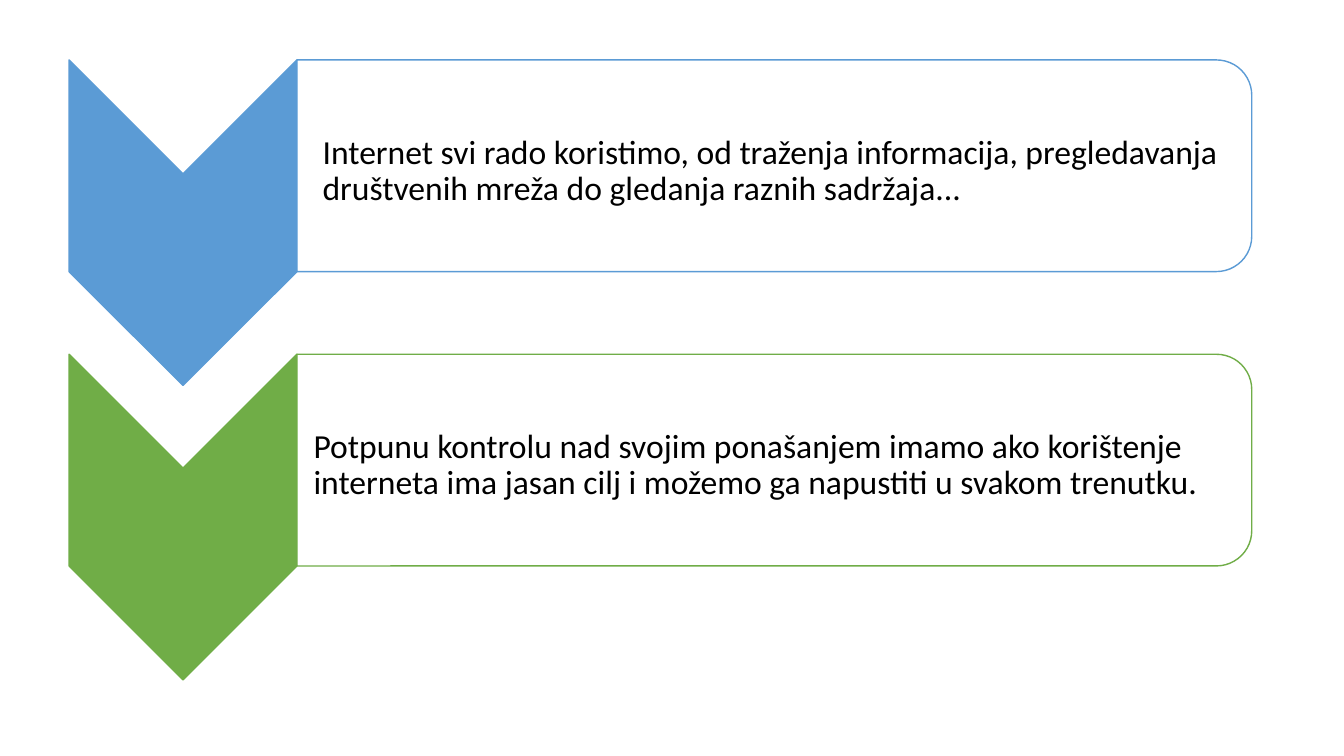
from dataclasses import dataclass

from lxml.etree import SubElement
from pptx import Presentation
from pptx.dml.color import RGBColor
from pptx.enum.shapes import MSO_SHAPE
from pptx.enum.text import MSO_ANCHOR, PP_ALIGN
from pptx.oxml.ns import qn
from pptx.util import Inches, Pt

BLUE = RGBColor(0x5B, 0x9B, 0xD5)
GREEN = RGBColor(0x70, 0xAD, 0x47)
WHITE = RGBColor(0xFF, 0xFF, 0xFF)
BLACK = RGBColor(0x00, 0x00, 0x00)

ROW_STEP = 2.92


@dataclass
class Row:
    text: str
    color: RGBColor
    text_inset: float


ROWS = [
    Row("Internet svi rado koristimo, od traženja informacija, pregledavanja "
        "društvenih mreža do gledanja raznih sadržaja...", BLUE, 0.25),
    Row("Potpunu kontrolu nad svojim ponašanjem imamo ako korištenje "
        "interneta ima jasan cilj i možemo ga napustiti u svakom trenutku.", GREEN, 0.16),
]


def add_turned_shape(slide, kind: MSO_SHAPE, left: float, top: float, width: float,
                     height: float, fill: RGBColor, line: RGBColor):
    """Add a shape turned a quarter clockwise."""
    s = slide.shapes.add_shape(kind, Inches(left), Inches(top), Inches(width), Inches(height))
    s.rotation = 90
    s.shadow.inherit = False
    s.fill.solid()
    s.fill.fore_color.rgb = fill
    s.line.color.rgb = line
    s.line.width = Pt(1)
    return s


def add_row_text(slide, row: Row, top: float) -> None:
    s = slide.shapes.add_textbox(Inches(2.95), Inches(top), Inches(9.37), Inches(1.9))
    tf = s.text_frame
    tf.word_wrap = True
    tf.vertical_anchor = MSO_ANCHOR.MIDDLE
    tf.margin_left = Inches(row.text_inset)
    tf.margin_top = Inches(0.12)
    tf.margin_right = tf.margin_bottom = Inches(0.02)
    p = tf.paragraphs[0]
    p.alignment = PP_ALIGN.LEFT
    p.line_spacing = 0.9
    r = p.add_run()
    r.text = row.text
    r.font.name = "Calibri"
    r.font.size = Pt(24)
    r.font.color.rgb = BLACK


def add_row(slide, row: Row, offset: float) -> None:
    # Chevron pointing down
    add_turned_shape(slide, MSO_SHAPE.CHEVRON, 0.2, 1.08 + offset, 3.23, 2.26,
                     row.color, row.color)
    # Panel with rounded right corners and a slightly transparent fill
    panel = add_turned_shape(slide, MSO_SHAPE.ROUND_2_SAME_RECTANGLE, 6.63, -3.09 + offset,
                             2.1, 9.47, WHITE, row.color)
    color = panel.fill._xPr.find(qn("a:solidFill")).find(qn("a:srgbClr"))
    SubElement(color, qn("a:alpha")).set("val", "90000")
    # Panel text
    add_row_text(slide, row, 0.7 + offset)


def main() -> None:
    prs = Presentation()
    prs.slide_width = Inches(13.33)
    prs.slide_height = Inches(7.5)
    slide = prs.slides.add_slide(prs.slide_layouts[6])
    for i, row in enumerate(ROWS):
        add_row(slide, row, i * ROW_STEP)
    prs.save("out.pptx")


if __name__ == "__main__":
    main()
